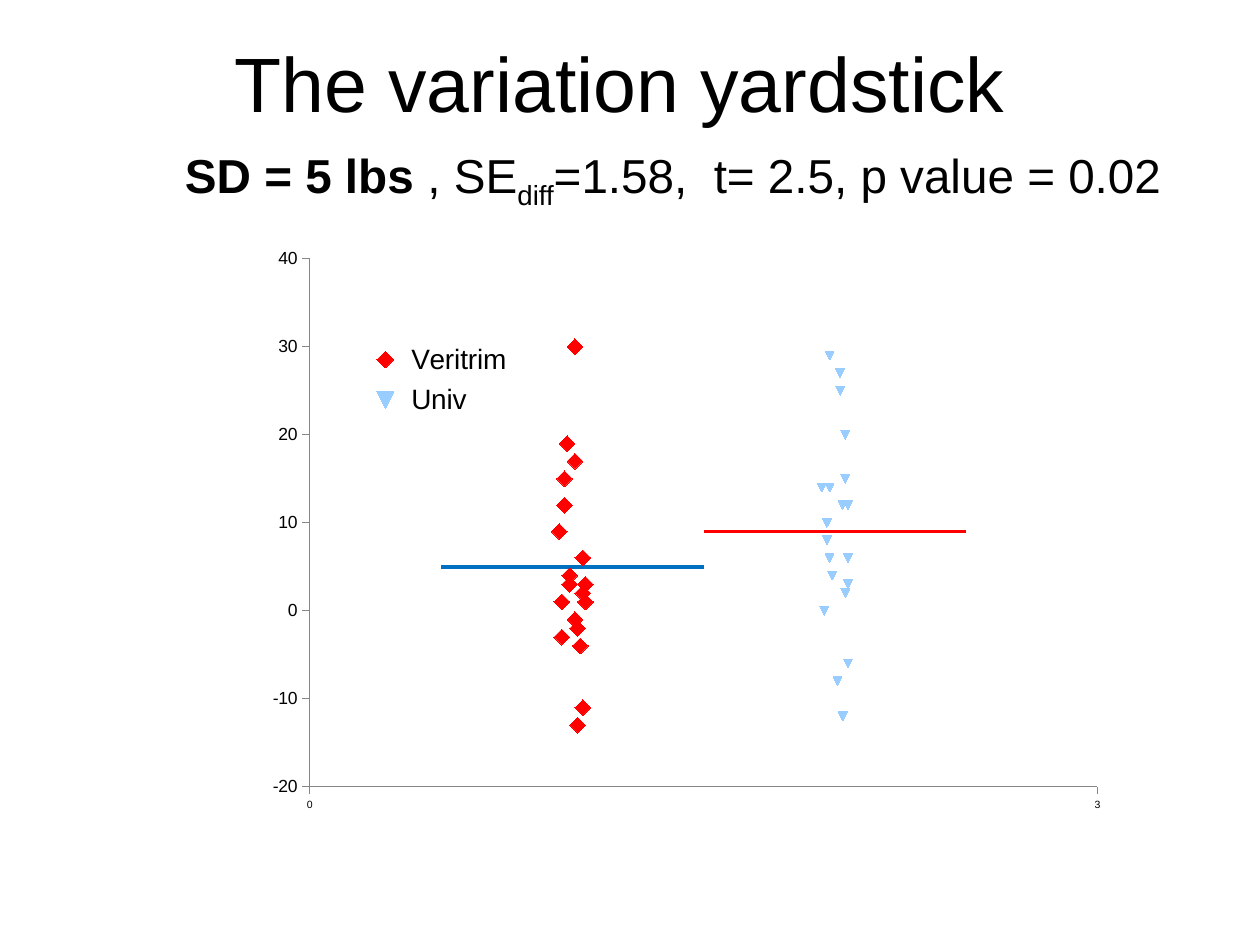
from pptx import Presentation
from pptx.chart.data import XyChartData
from pptx.dml.color import RGBColor
from pptx.enum.chart import XL_AXIS_CROSSES, XL_CHART_TYPE, XL_LEGEND_POSITION, XL_MARKER_STYLE, XL_TICK_MARK
from pptx.enum.text import MSO_ANCHOR, PP_ALIGN
from pptx.oxml import parse_xml
from pptx.oxml.ns import nsdecls
from pptx.util import Inches, Pt

FONT = "Arial"
BLACK, GRAY = "000000", "868686"
TITLE = [("The variation yardstick", None)]
STATISTICS = [
    ("SD = 5 lbs ", "bold"),
    (", SE", None),
    ("diff", "subscript"),
    ("=1.58,\u00a0 t= 2.5, p value = 0.02".replace("\u00a0", " "), None),
]
GROUPS = [
    {
        "name": "Veritrim", "color": "FF0000", "marker": XL_MARKER_STYLE.DIAMOND, "size": 9,
        "x": [1.01, 0.96, 0.96, 0.99, 1.04, 1.02, 1.01, 0.98, 1.01, 0.95,
              1.03, 1.05, 1.04, 0.97, 1.02, 1.05, 0.99, 0.97, 1.04, 0.97],
        "y": [17, -3, 1, 4, -11, -13, 30, 19, -1, 9, -4, 3, 2, 15, -2, 1, 3, 12, 6, 12],
    },
    {
        "name": "Univ", "color": "99CCFF", "marker": XL_MARKER_STYLE.AUTOMATIC, "size": 5,
        "x": [2.05, 1.97, 1.95, 2.04, 1.97, 1.99, 2.03, 2.05, 2.04, 2.05,
              2.03, 1.98, 2.02, 2.01, 2.04, 1.96, 2.05, 2.02, 1.98, 1.98],
        "y": [12, 8, 14, 20, 10, 4, 12, 6, 15, -6, -12, 29, 27, -8, 2, 0, 3, 25, 6, 14],
    },
]
MEANS = [
    {"name": "Series 3", "color": "0070C0", "x": [0.5, 1.5], "y": [5, 5]},
    {"name": "Series 4", "color": "FF0000", "x": [1.5, 2.5], "y": [9, 9]},
]


def rgb(value):
    """Return a colour from a hex string."""
    return RGBColor.from_string(value)


def add_text(page, place, spans, size, align, anchor):
    """Add one paragraph of styled spans."""
    box = page.shapes.add_textbox(*map(Inches, place))
    frame = box.text_frame
    frame.word_wrap = True
    frame.vertical_anchor = anchor
    para = frame.paragraphs[0]
    para.alignment = align
    para.font.name, para.font.size = FONT, Pt(size)
    para.font.color.rgb = rgb(BLACK)
    for text, style in spans:
        span = para.add_run()
        span.text = text
        if style == "bold":
            span.font.bold = True
        elif style == "subscript":
            span.font._element.set("baseline", "-25000")


def manual_layout(x, y, width, height, inner=False):
    """Return a chart layout in fractions of the chart area."""
    target = '<c:layoutTarget val="inner"/>' if inner else ""
    return parse_xml(
        f'<c:layout {nsdecls("c")}><c:manualLayout>{target}'
        f'<c:xMode val="edge"/><c:yMode val="edge"/><c:x val="{x}"/><c:y val="{y}"/>'
        f'<c:w val="{width}"/><c:h val="{height}"/></c:manualLayout></c:layout>'
    )


def style_axis(axis, low, high, step, size):
    """Set the scale and look of an axis."""
    axis.minimum_scale, axis.maximum_scale, axis.major_unit = low, high, step
    axis.has_major_gridlines = False
    axis.major_tick_mark = XL_TICK_MARK.OUTSIDE
    axis.minor_tick_mark = XL_TICK_MARK.NONE
    axis.crosses = XL_AXIS_CROSSES.MINIMUM
    axis.tick_labels.font.size = Pt(size)
    axis.tick_labels.number_format = "General"
    axis.tick_labels.number_format_is_linked = False
    axis.format.line.color.rgb = rgb(GRAY)


def style_legend(chart):
    """Place the legend and list only the two groups."""
    chart.has_legend = True
    legend = chart.legend
    legend.position = XL_LEGEND_POSITION.RIGHT
    legend.include_in_layout = False
    legend.font.size, legend.font.name = Pt(16), FONT
    element = legend._element
    for old in element.findall("{*}layout"):
        element.remove(old)
    hidden = [
        parse_xml(f'<c:legendEntry {nsdecls("c")}><c:idx val="{index}"/><c:delete val="1"/></c:legendEntry>')
        for index in range(len(GROUPS), len(GROUPS + MEANS))
    ]
    for place, item in enumerate(hidden + [manual_layout(0.13, 0.19, 0.18, 0.15)], 1):
        element.insert(place, item)


def add_scatter(page):
    """Add the scatter chart with a mean line for each group."""
    data = XyChartData()
    for entry in GROUPS + MEANS:
        series = data.add_series(entry["name"])
        for x, y in zip(entry["x"], entry["y"]):
            series.add_data_point(x, y)
    place = map(Inches, (1.92, 1.73, 7, 4.85))
    chart = page.shapes.add_chart(XL_CHART_TYPE.XY_SCATTER, *place, data).chart
    chart.has_title = False
    chart.font.name, chart.font.size = FONT, Pt(10)
    chart.font.color.rgb = rgb(BLACK)
    style_axis(chart.category_axis, 0, 3, 3, 6)
    style_axis(chart.value_axis, -20, 40, 10, 10)
    plot = chart.plots[0]
    plot.vary_by_categories = False
    for series, entry in zip(plot.series, GROUPS + MEANS):
        series.smooth = False
        line, marker = series.format.line, series.marker
        if "marker" in entry:
            line.fill.background()
            marker.style, marker.size = entry["marker"], entry["size"]
            marker.format.fill.solid()
            marker.format.fill.fore_color.rgb = rgb(entry["color"])
            marker.format.line.color.rgb = rgb(entry["color"])
        else:
            line.color.rgb, line.width = rgb(entry["color"]), Pt(2.25)
            marker.style = XL_MARKER_STYLE.NONE
    area = chart._chartSpace.chart.plotArea
    for old in area.findall("{*}layout"):
        area.remove(old)
    area.insert(0, manual_layout(0.077, 0.067, 0.893, 0.864, inner=True))
    style_legend(chart)


def main():
    """Build and save the slide."""
    deck = Presentation()
    deck.slide_width, deck.slide_height = Inches(10), Inches(7.5)
    page = deck.slides.add_slide(deck.slide_layouts[6])
    add_text(page, (0.42, 0.17, 9, 0.95), TITLE, 44, PP_ALIGN.CENTER, MSO_ANCHOR.MIDDLE)
    add_text(page, (1.37, 1.11, 8.3, 0.58), STATISTICS, 27.2, PP_ALIGN.LEFT, MSO_ANCHOR.TOP)
    add_scatter(page)
    deck.save("out.pptx")


if __name__ == "__main__":
    main()
